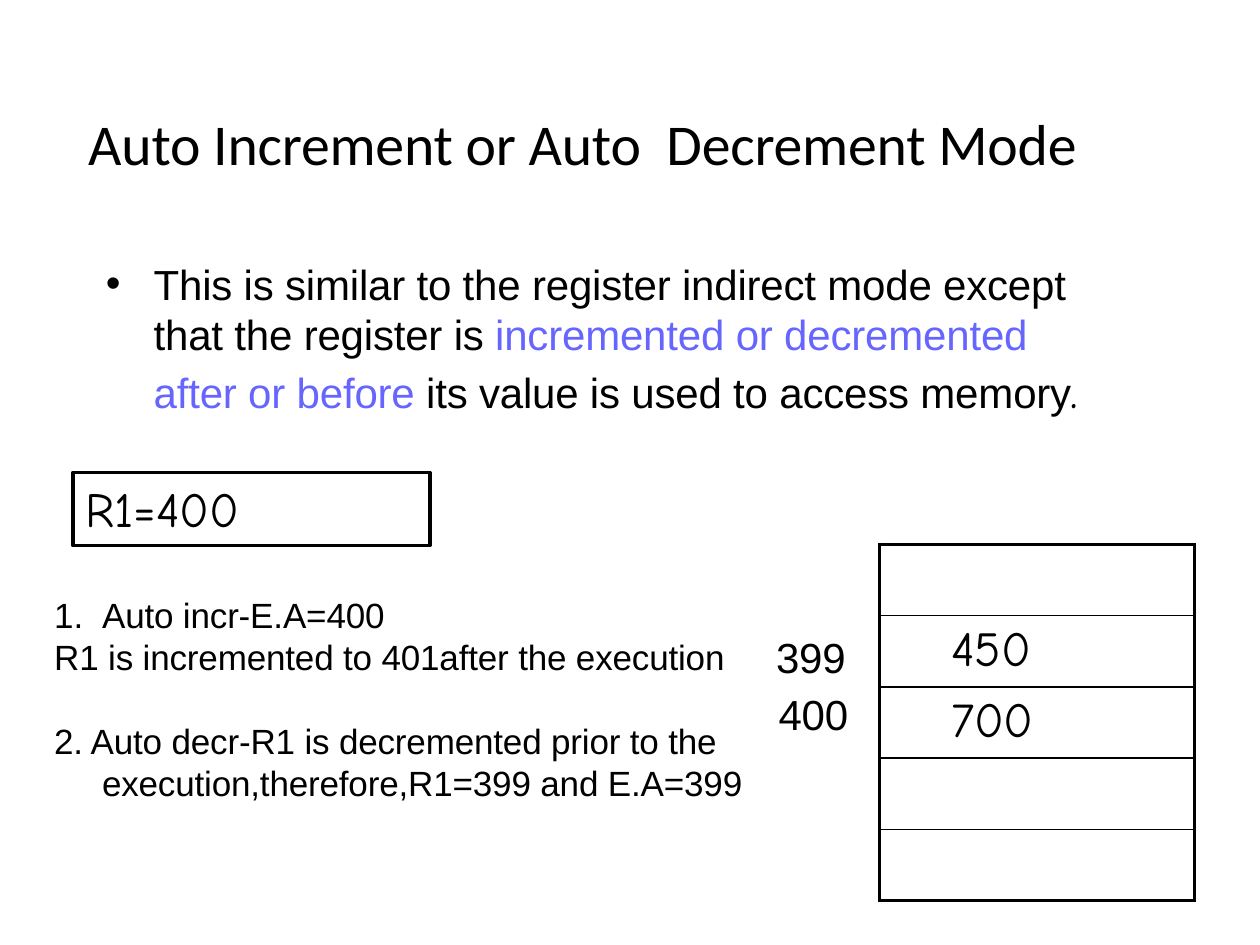
import pptx
import pptx.dml.color
import pptx.enum.shapes
import pptx.enum.text
import pptx.oxml
import pptx.oxml.ns
import pptx.util
from pptx.util import Inches

BLACK = pptx.dml.color.RGBColor(0x00, 0x00, 0x00)
BLUE = pptx.dml.color.RGBColor(0x66, 0x66, 0xFF)

TITLE = {"name": "Calibri", "size": pptx.util.Pt(33)}
BODY = {"name": "Arial", "size": pptx.util.Pt(24)}
NOTE = {"name": "Arial", "size": pptx.util.Pt(20)}
HAND = {"name": "Comic Neue", "size": pptx.util.Pt(28)}


def set_all(item, values):
    for name, value in values.items():
        setattr(item, name, value)


def add_runs(para, runs, left=0.01, hang=0, before=1):
    para.alignment = pptx.enum.text.PP_ALIGN.LEFT
    para.space_before = pptx.util.Pt(before)
    props = para._p.get_or_add_pPr()
    props.set("marL", str(Inches(left)))
    props.set("indent", str(Inches(-hang)))
    for text, style, *color in runs:
        run = para.add_run()
        run.text = text
        set_all(run.font, style)
        run.font.color.rgb = color[0] if color else BLACK
        run._r.get_or_add_rPr().set("spc", "-10")


def fill_frame(frame, paras, top=0.01, anchor="TOP"):
    set_all(frame, {
        "word_wrap": True,
        "margin_left": 0,
        "margin_top": Inches(top),
        "margin_right": 0,
        "margin_bottom": 0,
        "vertical_anchor": pptx.enum.text.MSO_ANCHOR[anchor],
    })
    for i, (runs, form) in enumerate(paras):
        para = frame.add_paragraph() if i else frame.paragraphs[0]
        add_runs(para, runs, **form)


def add_text(slide, box, paras, **form):
    shape = slide.shapes.add_textbox(*map(Inches, box))
    fill_frame(shape.text_frame, paras, **form)


def add_box(slide, box, text):
    kind = pptx.enum.shapes.MSO_SHAPE.RECTANGLE
    shape = slide.shapes.add_shape(kind, *map(Inches, box))
    shape.shadow.inherit = False
    shape.fill.background()
    set_all(shape.line, {"width": pptx.util.Pt(2.25)})
    shape.line.color.rgb = BLACK
    form = {"left": 0.1, "before": 3.7}
    fill_frame(shape.text_frame, [([(text, HAND)], form)], top=0.05)


def set_edges(cell, widths):
    props = cell._tc.get_or_add_tcPr()
    for i, (side, width) in enumerate(widths.items()):
        props.insert(i, pptx.oxml.parse_xml(
            f'<a:ln{side} {pptx.oxml.ns.nsdecls("a")} w="{pptx.util.Pt(width)}">'
            f'<a:solidFill><a:srgbClr val="{BLACK}"/></a:solidFill></a:ln{side}>'))


def add_cells(slide, box, values):
    count = len(values)
    table = slide.shapes.add_table(count, 1, *map(Inches, box)).table
    set_all(table, {"first_row": False, "horz_banding": False})
    for i, value in enumerate(values):
        cell = table.cell(i, 0)
        cell.fill.background()
        set_edges(cell, {
            "L": 2.25,
            "R": 2.25,
            "T": 2.25 if i == 0 else 1,
            "B": 2.25 if i == count - 1 else 1,
        })
        if value:
            set_all(cell, {"margin_left": 0, "margin_top": Inches(0.05),
                           "margin_right": 0, "margin_bottom": 0})
            add_runs(cell.text_frame.paragraphs[0], [(value, HAND)],
                     left=0.57, before=3.7)


def main():
    """Build the slide on auto increment and decrement addressing."""
    deck = pptx.Presentation()
    set_all(deck, {"slide_width": Inches(10), "slide_height": Inches(7.5)})
    slide = deck.slides.add_slide(deck.slide_layouts[6])

    title = "Auto Increment or Auto  Decrement Mode"
    add_text(slide, (0.69, 0.4, 8.62, 1.45), [([(title, TITLE)], {})],
             anchor="MIDDLE")
    add_text(slide, (0.83, 2.02, 0.15, 0.43), [([("•", BODY)], {})])
    add_text(slide, (1.21, 2.04, 7.48, 1.29), [([
        ("This is similar to the register indirect mode except  "
         "that the register is ", BODY),
        ("incremented or decremented  after or before ", BODY, BLUE),
        ("its value is used to access memory", BODY),
        (".", HAND),
    ], {})])

    add_box(slide, (0.58, 3.75, 2.83, 0.58), "R1=400")
    add_cells(slide, (6.98, 4.32, 2.5, 2.83), ["", "450", "700", "", ""])
    add_text(slide, (6.15, 4.94, 0.6, 0.94), [
        ([("399", BODY)], {"before": 5}),
        ([("400", BODY)], {"left": 0.03, "before": 4}),
    ], top=0.07)

    item = {"left": 0.39, "hang": 0.38}
    add_text(slide, (0.42, 4.7, 5.41, 0.69), [
        ([("1.\tAuto incr-E.A=400", NOTE)], item),
        ([("R1 is incremented to 401after the execution", NOTE)], {"before": 0}),
    ])
    add_text(slide, (0.42, 5.7, 5.54, 0.69), [
        ([("2. Auto decr-R1 is decremented prior to the  "
           "execution,therefore,R1=399 and E.A=399", NOTE)], item),
    ])
    deck.save("out.pptx")


if __name__ == "__main__":
    main()
